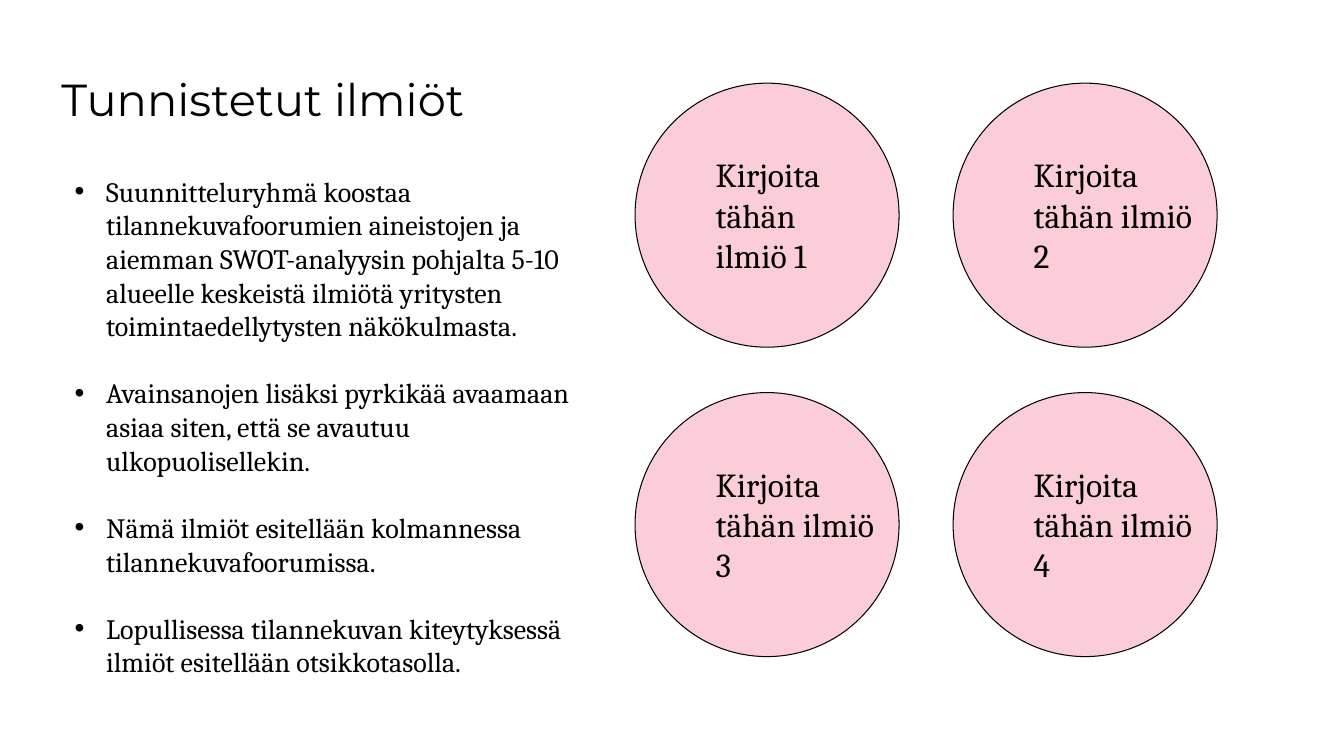
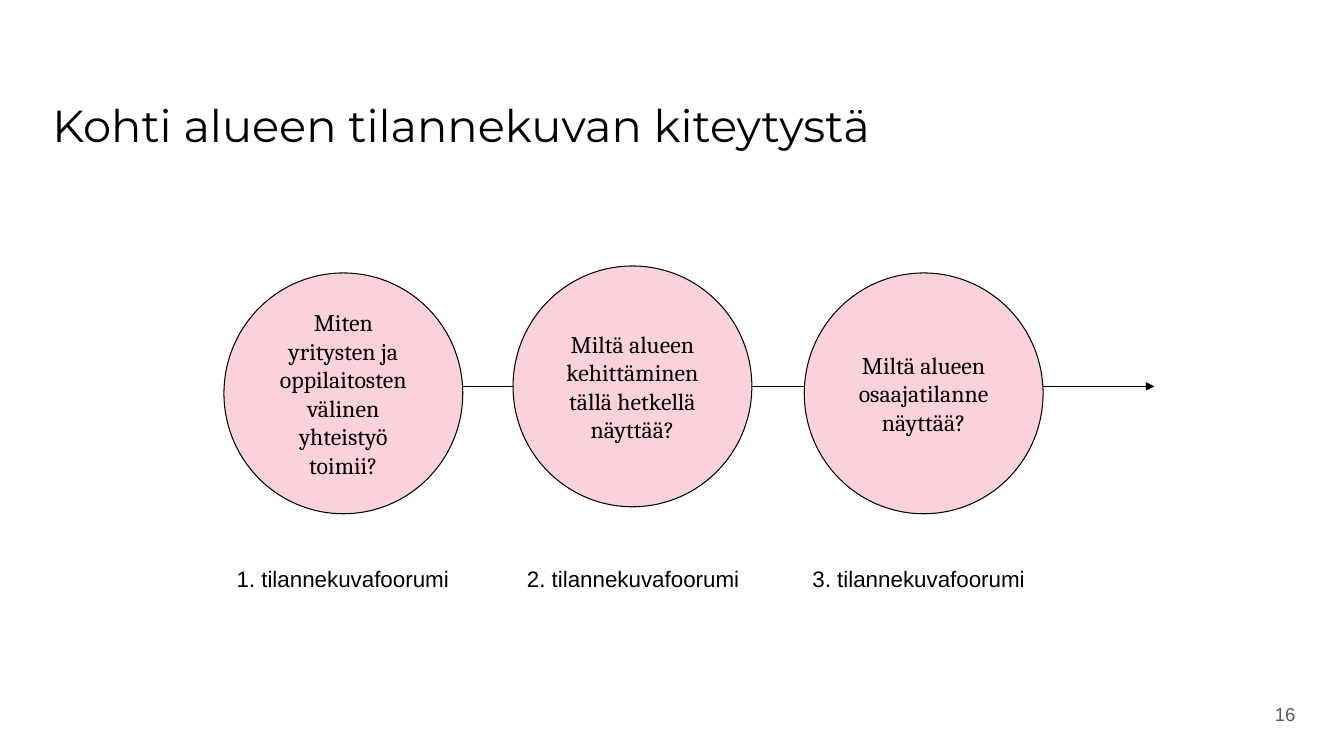
from lxml import etree
from pptx import Presentation
from pptx.dml.color import RGBColor
from pptx.enum.shapes import MSO_CONNECTOR, MSO_SHAPE
from pptx.enum.text import MSO_ANCHOR as ANCHOR, MSO_AUTO_SIZE as FIT, PP_ALIGN as ALIGN
from pptx.oxml.ns import qn
from pptx.util import Pt

BLACK = RGBColor(0x00, 0x00, 0x00)
GREY = RGBColor(0x59, 0x59, 0x59)
PINK = RGBColor(0xFA, 0xCD, 0xD9)
LIGHT_PINK = RGBColor(0xFB, 0xD1, 0xDC)
HEADING, SERIF, SANS = "Montserrat", "Cambria", "Arial"
TITLE_AND_BODY, TITLE_ONLY = 1, 5

TASKS = [
    "Suunnitteluryhmä koostaa tilannekuvafoorumien aineistojen ja aiemman "
    "SWOT-analyysin pohjalta 5-10 alueelle keskeistä ilmiötä yritysten "
    "toimintaedellytysten näkökulmasta.",
    "Avainsanojen lisäksi pyrkikää avaamaan asiaa siten, että se avautuu ulkopuolisellekin.",
    "Nämä ilmiöt esitellään kolmannessa tilannekuvafoorumissa.",
    "Lopullisessa tilannekuvan kiteytyksessä ilmiöt esitellään otsikkotasolla.",
]
# question, circle left and top, caption left and alignment
FORUMS = [
    ("Miten yritysten ja oppilaitosten välinen yhteistyö toimii?", 160, 195, 130.3, ALIGN.CENTER),
    ("Miltä alueen kehittäminen tällä hetkellä näyttää?", 366.5, 190, 337.7, ALIGN.CENTER),
    ("Miltä alueen osaajatilanne näyttää?", 574.5, 195, 580.3, ALIGN.LEFT),
]


def place(sp, x, y, w, h):
    sp.left, sp.top, sp.width, sp.height = Pt(x), Pt(y), Pt(w), Pt(h)


def set_margins(tf, margin):
    tf.margin_left = tf.margin_top = tf.margin_right = tf.margin_bottom = Pt(margin)


def write(p, text, font, size, color=BLACK, align=ALIGN.LEFT):
    p.alignment = align
    r = p.add_run()
    r.text = text
    r.font.name, r.font.size, r.font.color.rgb = font, Pt(size), color


def add_slide(prs, layout, title, x, y, w, h):
    slide = prs.slides.add_slide(prs.slide_layouts[layout])
    sp = slide.shapes.title
    place(sp, x, y, w, h)
    tf = sp.text_frame
    tf.auto_size, tf.vertical_anchor = FIT.NONE, ANCHOR.TOP
    write(tf.paragraphs[0], title, HEADING, 32)
    return slide


def add_text(slide, box, text, font, size, margin=0, color=BLACK,
             align=ALIGN.LEFT, anchor=ANCHOR.TOP):
    tf = slide.shapes.add_textbox(*map(Pt, box)).text_frame
    tf.word_wrap, tf.vertical_anchor = True, anchor
    set_margins(tf, margin)
    write(tf.paragraphs[0], text, font, size, color, align)


def add_circle(slide, x, y, w, h, fill):
    sp = slide.shapes.add_shape(MSO_SHAPE.OVAL, Pt(x), Pt(y), Pt(w), Pt(h))
    sp.shadow.inherit = False
    sp.fill.solid()
    sp.fill.fore_color.rgb = fill
    sp.line.color.rgb, sp.line.width = BLACK, Pt(0.75)
    return sp


def add_line(slide, x1, x2, y, arrow=False):
    line = slide.shapes.add_connector(MSO_CONNECTOR.STRAIGHT, Pt(x1), Pt(y), Pt(x2), Pt(y))
    line.line.color.rgb, line.line.width = BLACK, Pt(0.5)
    if arrow:
        etree.SubElement(line.line._get_or_add_ln(), qn("a:tailEnd"), type="triangle")
    etree.SubElement(line._element.spPr, qn("a:effectLst"))


def fill_task_list(sp, x, y, w, h):
    place(sp, x, y, w, h)
    tf = sp.text_frame
    tf.auto_size, tf.vertical_anchor = FIT.NONE, ANCHOR.TOP
    set_margins(tf, 0)
    for i, task in enumerate(TASKS):
        p = tf.add_paragraph() if i else tf.paragraphs[0]
        p.space_before = Pt(24 if i else 0)
        pPr = p._p.get_or_add_pPr()
        pPr.set("marL", str(Pt(22.5)))
        pPr.set("indent", str(Pt(-22.5)))
        write(p, task, SERIF, 20)


def add_phenomena_grid(slide, x, y, size=188.6, step_x=227.2, step_y=221):
    for i in range(4):
        row, col = divmod(i, 2)
        left, top = x + col * step_x, y + row * step_y
        add_circle(slide, left, top, size, size, PINK)
        width = 130 if i else 124
        add_text(slide, (left + 50.5, top + 43.5, width, 101.5),
                 f"Kirjoita tähän ilmiö {i + 1}", SERIF, 24, margin=7.2)


def add_forum_chain(slide, line_y, caption_y):
    add_line(slide, 175, 740, line_y)
    add_line(slide, 727, 824.5, line_y, arrow=True)
    for number, (question, x, y, caption_x, align) in enumerate(FORUMS, 1):
        tf = add_circle(slide, x, y, 170.6, 172, LIGHT_PINK).text_frame
        tf.word_wrap, tf.vertical_anchor = True, ANCHOR.MIDDLE
        write(tf.paragraphs[0], question, SERIF, 17, align=ALIGN.CENTER)
        add_text(slide, (caption_x, caption_y, 229, 19.5),
                 f"{number}. tilannekuvafoorumi", SANS, 16, align=align)


def phenomena_slide(prs):
    slide = add_slide(prs, TITLE_AND_BODY, "Tunnistetut ilmiöt", 36.7, 47.5, 364.3, 93)
    fill_task_list(slide.placeholders[1], 53.3, 124.5, 373.7, 363.6)
    add_phenomena_grid(slide, 453.6, 59.4)


def forums_slide(prs):
    slide = add_slide(prs, TITLE_ONLY, "Kohti alueen tilannekuvan kiteytystä",
                      30.2, 66.2, 793.4, 90.7)
    add_forum_chain(slide, 276, 403.5)
    add_text(slide, (889.2, 489.6, 57.6, 41), "16", SANS, 13.3, margin=7.2,
             color=GREY, align=ALIGN.CENTER, anchor=ANCHOR.MIDDLE)


def main():
    prs = Presentation()
    prs.slide_width, prs.slide_height = Pt(960), Pt(540)
    phenomena_slide(prs)
    forums_slide(prs)
    prs.save("out.pptx")


if __name__ == "__main__":
    main()
